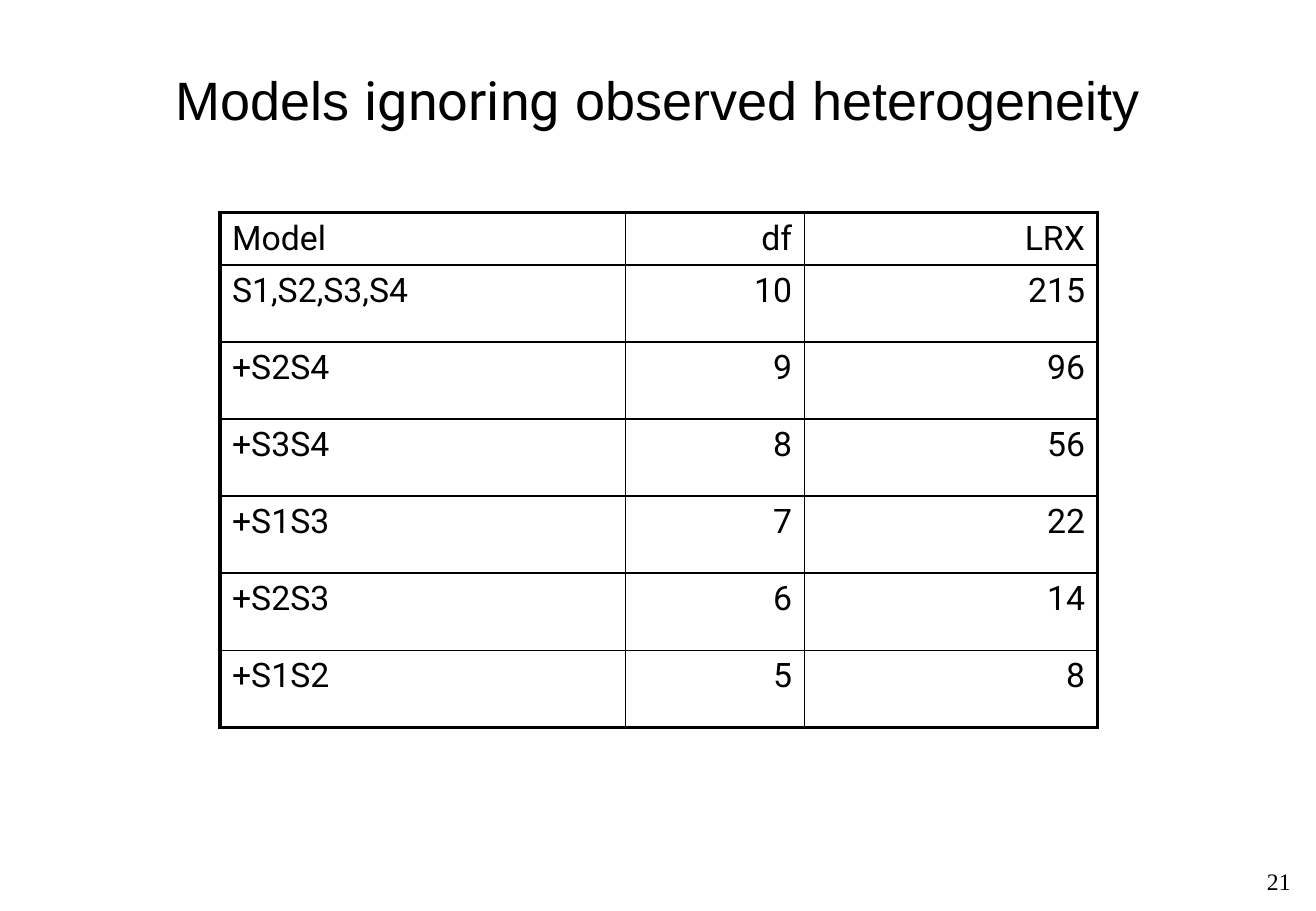
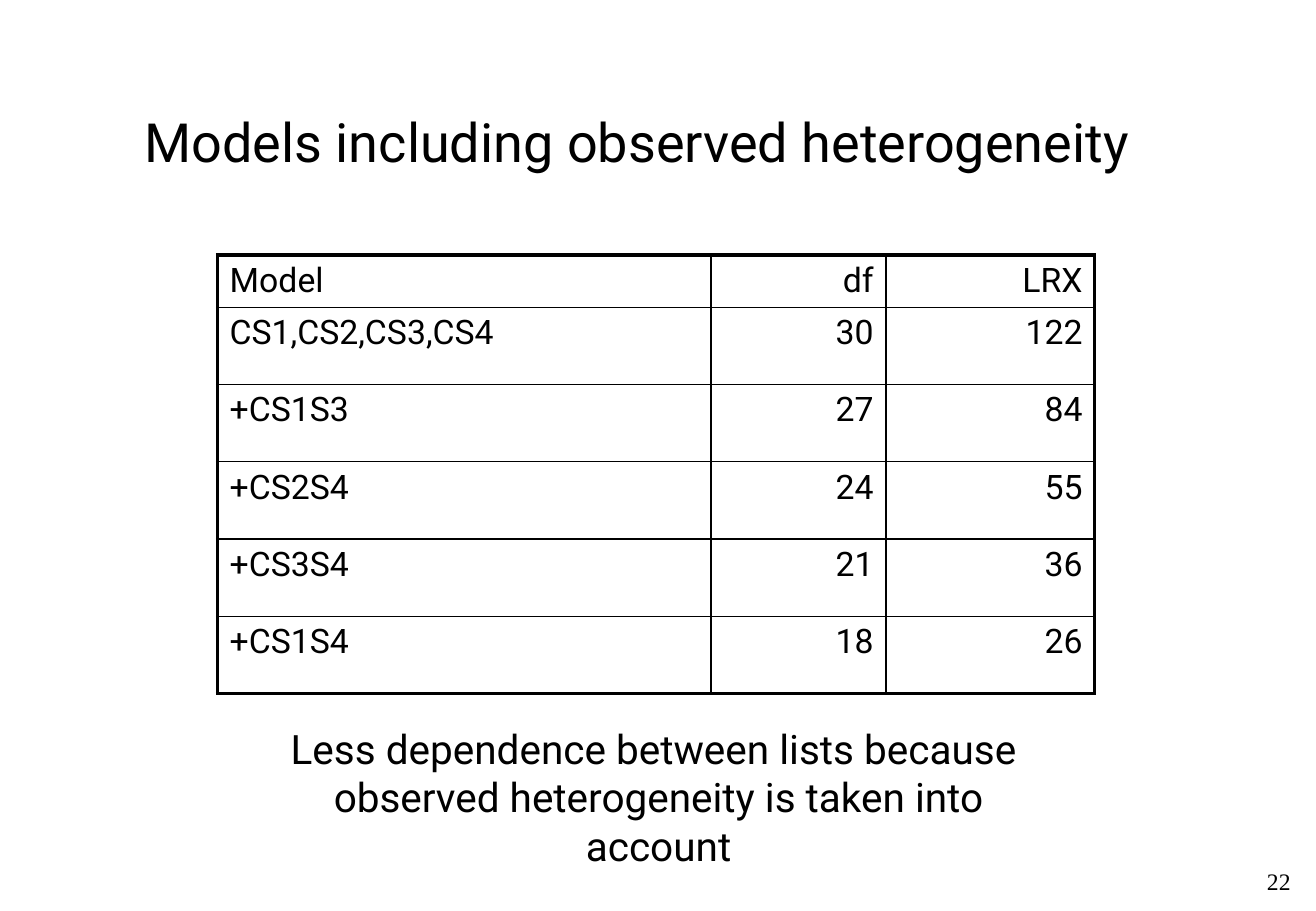
from dataclasses import dataclass
from typing import NamedTuple

from lxml.etree import SubElement
from pptx import Presentation
from pptx.dml.color import RGBColor
from pptx.enum.text import MSO_ANCHOR as Anchor
from pptx.enum.text import MSO_AUTO_SIZE as Fit
from pptx.enum.text import PP_ALIGN as Align
from pptx.oxml.ns import qn
from pptx.util import Inches, Pt

BLACK = RGBColor(0x00, 0x00, 0x00)
SANS, ARIAL, SERIF = "Roboto", "Arial", "Times New Roman"
TITLE_ONLY = 5
FIRST_PAGE = 21
HEAD_ROW = 0.43
THICK, THIN = 2.25, 1
HEAD = ("Model", "df", "LRX")


class Run(NamedTuple):
    text: str
    font: str = SANS


class Box(NamedTuple):
    left: float
    top: float
    width: float
    height: float

    def place(self):
        return [Inches(side) for side in self]


@dataclass
class Page:
    title: list[Run]
    title_box: Box
    grid: Box
    cols: tuple[float, ...]
    rows: list[tuple[str, int, int]]


PAGES = [
    Page(
        [Run("Models ", ARIAL), Run("ignoring"), Run(" observed heterogeneity", ARIAL)],
        Box(0.62, 0.5, 9.59, 0.63),
        Box(1.81, 1.75, 7.22, 4.24),
        (3.34, 1.47, 2.41),
        [("S1,S2,S3,S4", 10, 215), ("+S2S4", 9, 96), ("+S3S4", 8, 56),
         ("+S1S3", 7, 22), ("+S2S3", 6, 14), ("+S1S2", 5, 8)],
    ),
    Page(
        [Run("Models including observed heterogeneity")],
        Box(0.45, 0.84, 9.59, 0.63),
        Box(1.79, 2.1, 7.22, 3.61),
        (4.06, 1.44, 1.72),
        [("CS1,CS2,CS3,CS4", 30, 122), ("+CS1S3", 27, 84), ("+CS2S4", 24, 55),
         ("+CS3S4", 21, 36), ("+CS1S4", 18, 26)],
    ),
]
NOTE = [
    [Run("Less dependence between lists because ")],
    [Run("observed heterogeneity is taken into account")],
]


def write(frame, *lines: list[Run], size: float, align=Align.CENTER,
          anchor=Anchor.TOP, wrap: bool = True, inset: float = 0.1) -> None:
    """Fill a text frame, one paragraph for each list of runs."""
    frame.auto_size = Fit.NONE
    frame.word_wrap = wrap
    frame.vertical_anchor = anchor
    frame.margin_left = frame.margin_right = Inches(inset)
    frame.margin_top = frame.margin_bottom = Inches(0.05)
    for i, line in enumerate(lines):
        para = frame.paragraphs[0] if i == 0 else frame.add_paragraph()
        para.alignment = align
        for part in line:
            run = para.add_run()
            run.text = part.text
            run.font.name = part.font
            run.font.size = Pt(size)
            run.font.color.rgb = BLACK


def add_text(slide, box: Box, *lines: list[Run], **style) -> None:
    write(slide.shapes.add_textbox(*box.place()).text_frame, *lines, **style)


def add_title(slide, page: Page) -> None:
    title = slide.shapes.title
    title.left, title.top, title.width, title.height = page.title_box.place()
    write(title.text_frame, page.title, size=32)


def rule_cell(cell, edges: dict[str, bool]) -> None:
    """Draw the four borders, thick where the side is an outer edge."""
    props = cell._tc.get_or_add_tcPr()
    for i, (side, outer) in enumerate(edges.items()):
        width = str(Pt(THICK if outer else THIN))
        line = SubElement(props, qn(f"a:ln{side}"), w=width)
        fill = SubElement(line, qn("a:solidFill"))
        SubElement(fill, qn("a:srgbClr"), val=str(BLACK))
        props.insert(i, line)


def add_grid(slide, page: Page) -> None:
    rows = [HEAD, *page.rows]
    table = slide.shapes.add_table(len(rows), len(HEAD), *page.grid.place()).table
    table.first_row = table.horz_banding = False
    for col, width in zip(table.columns, page.cols):
        col.width = Inches(width)
    step = (page.grid.height - HEAD_ROW) / len(page.rows)
    for r, row in enumerate(rows):
        table.rows[r].height = Inches(step if r else HEAD_ROW)
        for c, value in enumerate(row):
            cell = table.cell(r, c)
            cell.fill.background()
            cell.margin_left = cell.margin_right = Inches(0.1)
            cell.margin_top = cell.margin_bottom = Inches(0.05)
            para = cell.text_frame.paragraphs[0]
            para.alignment = Align.RIGHT if c else Align.LEFT
            run = para.add_run()
            run.text = str(value)
            run.font.name = SANS
            run.font.size = Pt(20)
            run.font.color.rgb = BLACK
            rule_cell(cell, {"L": c == 0, "R": c == len(HEAD) - 1,
                             "T": r == 0, "B": r == len(rows) - 1})


def main() -> None:
    deck = Presentation()
    deck.slide_width, deck.slide_height = Inches(10.83), Inches(7.5)
    for number, page in enumerate(PAGES, FIRST_PAGE):
        slide = deck.slides.add_slide(deck.slide_layouts[TITLE_ONLY])
        add_text(slide, Box(10.18, 7.09, 0.54, 0.33), [Run(str(number), SERIF)],
                 size=14, align=Align.RIGHT, anchor=Anchor.MIDDLE, wrap=False)
        add_grid(slide, page)
        add_title(slide, page)
    add_text(slide, Box(2.01, 5.91, 6.82, 0.9), *NOTE, size=24, inset=0.2)
    deck.save("out.pptx")


if __name__ == "__main__":
    main()
